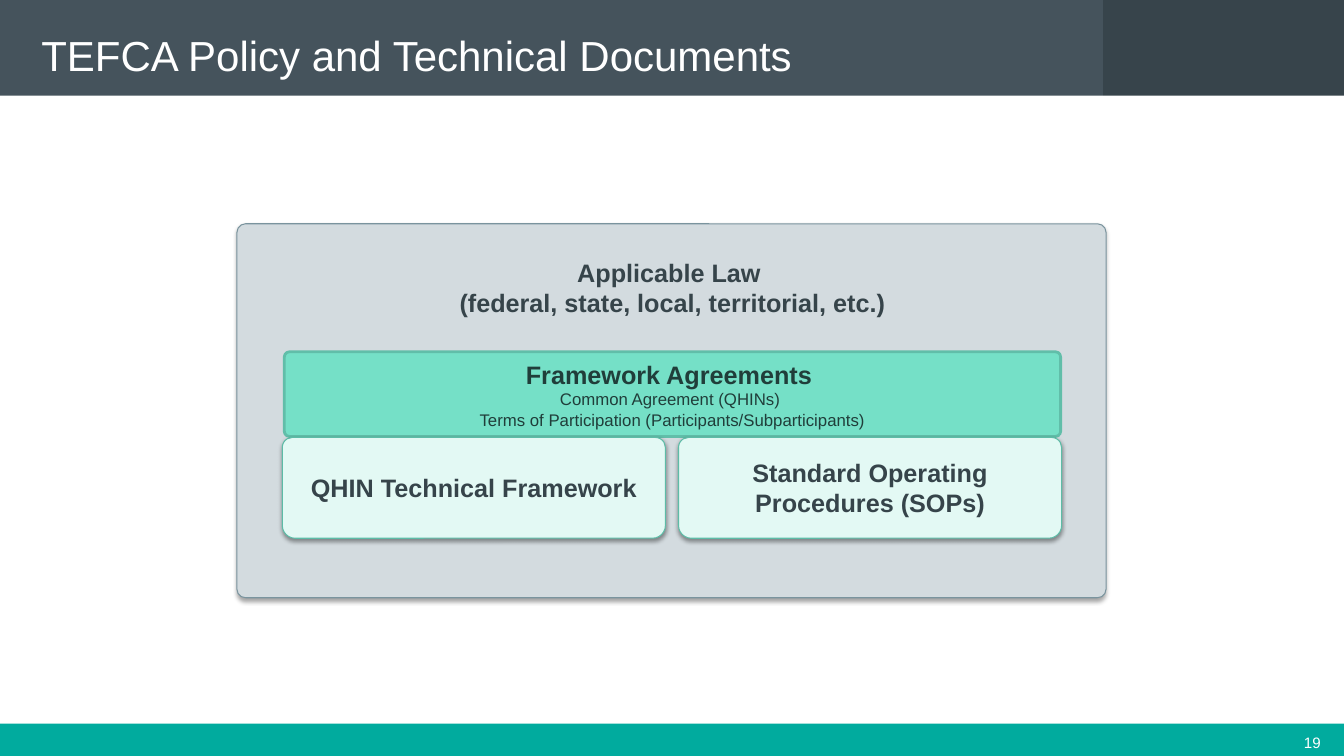
import pptx
import pptx.util
import pptx.oxml
import pptx.dml.color
import pptx.enum.shapes
import pptx.enum.text
from dataclasses import dataclass

Inches = pptx.util.Inches
Pt = pptx.util.Pt
Rgb = pptx.dml.color.RGBColor.from_string
Shape = pptx.enum.shapes.MSO_SHAPE
Align = pptx.enum.text.PP_ALIGN
Anchor = pptx.enum.text.MSO_ANCHOR


@dataclass(frozen=True)
class Theme:
    font: str = "Arial"
    teal: str = "01AB9E"
    slate: str = "45535C"
    dark: str = "37444B"
    white: str = "FFFFFF"
    law: str = "D3DBDF"
    law_edge: str = "7A949E"
    mint: str = "75E0C7"
    mint_edge: str = "61BEA9"
    pale: str = "E3F9F4"
    pale_edge: str = "5DBCA7"
    ink: str = "36444A"
    pine: str = "203E3A"
    title: float = 30
    head: float = 18
    body: float = 12
    page: float = 10.8


theme = Theme()


def draw(kind, place, fill, edge=None, width=0.75, bends=(), shade=None):
    """Add a filled shape; shade is the shadow's opacity in percent and its distance in points."""
    shape = slide.shapes.add_shape(kind, *map(Inches, place))
    shape.shadow.inherit = False
    shape.fill.solid()
    shape.fill.fore_color.rgb = Rgb(fill)
    if edge:
        shape.line.color.rgb = Rgb(edge)
        shape.line.width = Pt(width)
    else:
        shape.line.fill.background()
    for i, bend in enumerate(bends):
        shape.adjustments[i] = bend
    if shade:
        alpha, drop = shade
        effects = shape.element.spPr.find(pptx.oxml.ns.qn("a:effectLst"))
        effects.append(pptx.oxml.parse_xml(
            f'<a:outerShdw {pptx.oxml.ns.nsdecls("a")} blurRad="{Pt(3.1)}" '
            f'dist="{Pt(drop)}" dir="5400000" rotWithShape="0">'
            f'<a:srgbClr val="000000"><a:alpha val="{alpha * 1000}"/></a:srgbClr>'
            '</a:outerShdw>'))
    return shape


def write(shape, lines, color, align=Align.CENTER, anchor=Anchor.MIDDLE):
    """Fill a shape with lines of (text, size, bold)."""
    frame = shape.text_frame
    frame.word_wrap = True
    frame.auto_size = pptx.enum.text.MSO_AUTO_SIZE.NONE
    frame.vertical_anchor = anchor
    frame.text = "\n".join(line[0] for line in lines)
    for para, (_, size, bold) in zip(frame.paragraphs, lines):
        para.alignment = align
        for run in para.runs:
            run.font.name = theme.font
            run.font.size = Pt(size)
            run.font.bold = bold
            run.font.color.rgb = Rgb(color)


deck = pptx.Presentation()
deck.slide_width = Inches(13.33)
deck.slide_height = Inches(7.5)
slide = deck.slides.add_slide(deck.slide_layouts[5])

# Header and footer bands
for place, fill in [
    ((0, 7.18, 13.33, 0.32), theme.teal),
    ((0, 0, 10.94, 0.95), theme.slate),
    ((10.94, 0, 2.39, 0.95), theme.dark),
]:
    draw(Shape.RECTANGLE, place, fill)

# Title, raised above the bands, and page number
title = slide.shapes.title
slide.shapes.element.append(title.element)
title.left, title.top, title.width, title.height = map(Inches, (0.29, 0.14, 10.63, 0.81))
page = slide.shapes.add_textbox(*map(Inches, (12.65, 7.24, 0.57, 0.26)))
for shape, text, size, align in [
    (title, "TEFCA Policy and Technical Documents", theme.title, Align.LEFT),
    (page, "19", theme.page, Align.RIGHT),
]:
    write(shape, [(text, size, False)], theme.white, align)
    frame = shape.text_frame
    frame.margin_left = frame.margin_right = Inches(0.12)
    frame.margin_top = frame.margin_bottom = Inches(0.06)

# Applicable law surrounds everything else
draw(Shape.ROUNDED_RECTANGLE, (2.35, 2.22, 8.62, 3.71), theme.law, theme.law_edge,
     bends=[0.023], shade=(35, 1.8))
law = slide.shapes.add_textbox(*map(Inches, (3.04, 2.5, 7.26, 0.71)))
write(law, [("Applicable Law ", theme.head, True),
            ("(federal, state, local, territorial, etc.)", theme.head, True)],
      theme.ink, anchor=Anchor.TOP)

# Framework agreements
pact = draw(Shape.ROUNDED_RECTANGLE, (2.82, 3.49, 7.7, 0.84), theme.mint, theme.mint_edge,
            width=2, bends=[0.062])
write(pact, [("Framework Agreements ", theme.head, True),
             ("Common Agreement (QHINs) ", theme.body, False),
             ("Terms of Participation (Participants/Subparticipants)", theme.body, False)],
      theme.pine)

# The two documents beneath
for i, text in enumerate(["QHIN Technical Framework", "Standard Operating Procedures (SOPs)"]):
    card = draw(Shape.ROUND_2_SAME_RECTANGLE, (2.8 + i * 3.93, 4.34, 3.8, 1), theme.pale,
                theme.pale_edge, bends=[0.099, 0.128], shade=(38, 1.6))
    write(card, [(text, theme.head, True)], theme.ink)

deck.save("out.pptx")
